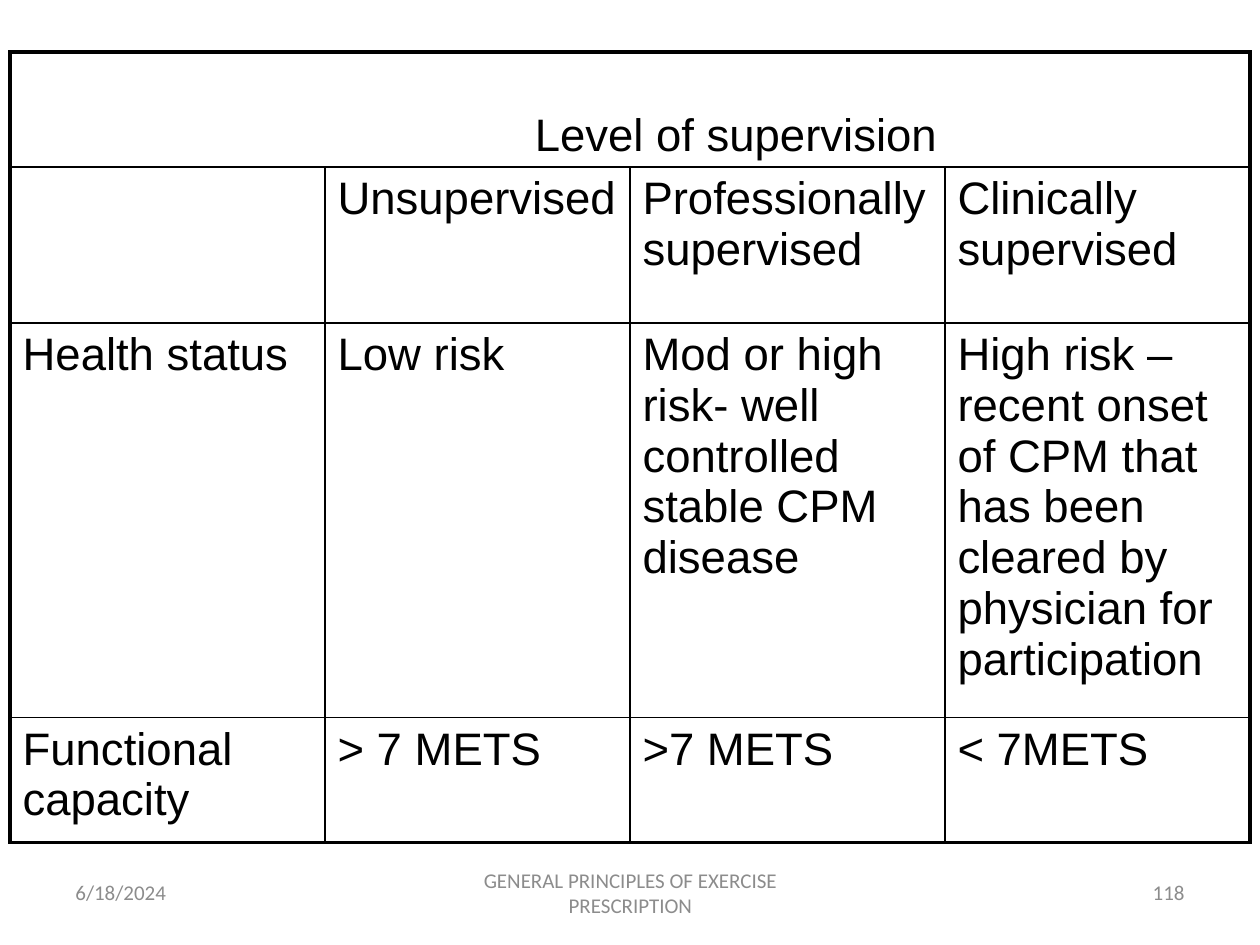
"""Build a slide with an exercise supervision table and its footer."""
from lxml.etree import SubElement
from pptx import Presentation
from pptx.dml.color import RGBColor
from pptx.enum.text import MSO_ANCHOR, PP_ALIGN
from pptx.oxml.ns import qn
from pptx.util import Pt

PX = 914400 // 126
BLACK = RGBColor(0x00, 0x00, 0x00)
GREY = RGBColor(0x8C, 0x8C, 0x8C)

HEADING = "Level of supervision"
ROWS = [
    (HEADING, "", "", ""),
    ("", "Unsupervised", "Professionally supervised", "Clinically supervised"),
    ("Health status", "Low risk",
     "Mod or high risk- well controlled stable CPM disease",
     "High risk –recent onset of CPM that has been cleared by physician for participation"),
    ("Functional capacity", "> 7 METS", ">7 METS", "< 7METS"),
]
COLUMN_WIDTHS = [315, 305, 315, 305]
ROW_HEIGHTS = [115, 156, 368, 125]
TABLE_LEFT, TABLE_TOP = 10, 52
HEADING_INDENT = 225
FOOTER_TOP, FOOTER_HEIGHT = 861, 63
FOOTERS = [
    ("6/18/2024", 63, 294, PP_ALIGN.LEFT),
    ("GENERAL PRINCIPLES OF EXERCISE PRESCRIPTION", 431, 399, PP_ALIGN.CENTER),
    ("118", 903, 294, PP_ALIGN.RIGHT),
]


def format_runs(paragraph, font_name, size, color):
    for run in paragraph.runs:
        run.font.name = font_name
        run.font.size = Pt(size)
        run.font.color.rgb = color


def set_borders(cell, outer_sides):
    properties = cell._tc.get_or_add_tcPr()
    for position, side in enumerate("LRTB"):
        width = Pt(2.25 if outer_sides[side] else 1)
        line = SubElement(properties, qn(f"a:ln{side}"), w=str(width))
        fill = SubElement(line, qn("a:solidFill"))
        SubElement(fill, qn("a:srgbClr"), val=str(BLACK))
        properties.insert(position, line)


def add_supervision_table(slide):
    table = slide.shapes.add_table(
        len(ROWS), len(COLUMN_WIDTHS), TABLE_LEFT * PX, TABLE_TOP * PX,
        sum(COLUMN_WIDTHS) * PX, sum(ROW_HEIGHTS) * PX).table
    table.first_row = table.horz_banding = False
    for column, width in zip(table.columns, COLUMN_WIDTHS):
        column.width = width * PX
    last_row, last_column = len(ROWS) - 1, len(COLUMN_WIDTHS) - 1
    for r, (labels, height) in enumerate(zip(ROWS, ROW_HEIGHTS)):
        table.rows[r].height = height * PX
        for c, label in enumerate(labels):
            cell = table.cell(r, c)
            cell.fill.background()
            set_borders(cell, {"L": c == 0 or r == 0, "R": c == last_column or r == 0,
                               "T": r == 0, "B": r == last_row})
            if label:
                cell.text_frame.text = label
                format_runs(cell.text_frame.paragraphs[0], "Arial", 26, BLACK)
    heading = table.cell(0, 0)
    heading.merge(table.cell(0, last_column))
    heading.margin_left = HEADING_INDENT * PX
    heading.vertical_anchor = MSO_ANCHOR.BOTTOM
    heading.text_frame.paragraphs[0].alignment = PP_ALIGN.CENTER


def add_footers(slide):
    for label, left, width, alignment in FOOTERS:
        frame = slide.shapes.add_textbox(
            left * PX, FOOTER_TOP * PX, width * PX, FOOTER_HEIGHT * PX).text_frame
        frame.word_wrap = True
        frame.vertical_anchor = MSO_ANCHOR.MIDDLE
        frame.text = label
        frame.paragraphs[0].alignment = alignment
        format_runs(frame.paragraphs[0], "Calibri", 12, GREY)


def main():
    presentation = Presentation()
    presentation.slide_width = 1260 * PX
    presentation.slide_height = 945 * PX
    slide = presentation.slides.add_slide(presentation.slide_layouts[6])
    add_footers(slide)
    add_supervision_table(slide)
    presentation.save("out.pptx")


if __name__ == "__main__":
    main()
